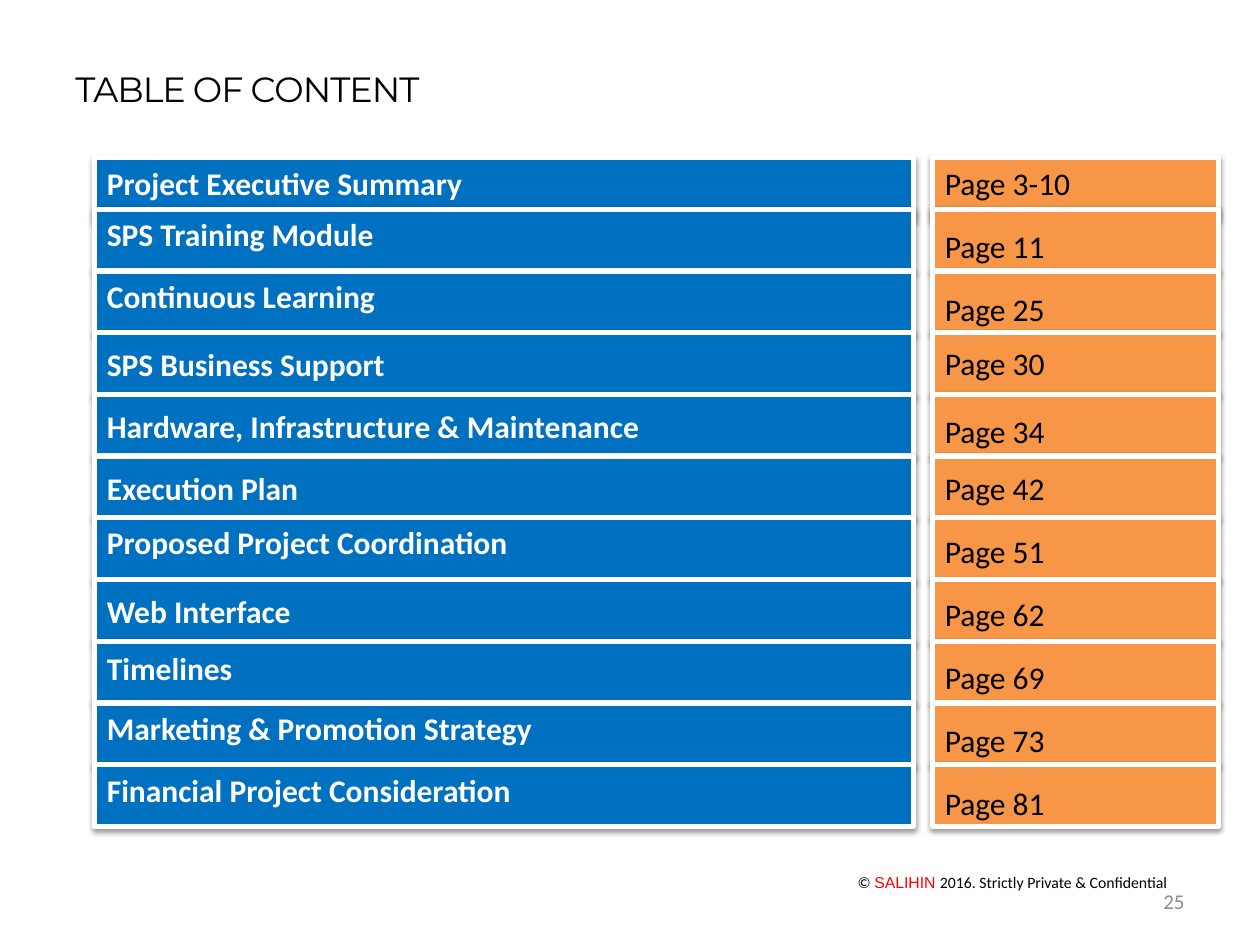
"""Build the table of content slide with its topic bars and page bars."""
from lxml import etree
from pptx import Presentation
from pptx.dml.color import RGBColor
from pptx.enum.shapes import MSO_SHAPE
from pptx.enum.text import MSO_ANCHOR, MSO_AUTO_SIZE, PP_ALIGN
from pptx.oxml import parse_xml
from pptx.util import Inches, Pt

RECTANGLE = MSO_SHAPE.RECTANGLE
TOP, MIDDLE, BOTTOM = MSO_ANCHOR.TOP, MSO_ANCHOR.MIDDLE, MSO_ANCHOR.BOTTOM
GROW, FIXED = MSO_AUTO_SIZE.SHAPE_TO_FIT_TEXT, MSO_AUTO_SIZE.NONE
LEFT, RIGHT = PP_ALIGN.LEFT, PP_ALIGN.RIGHT

COLORS = {"blue": "0070C0", "orange": "F79646", "white": "FFFFFF",
          "black": "000000", "red": "FF0000", "gray": "8C8C8C"}

TITLE = "TABLE OF CONTENT"
PAGE_NUMBER = "25"
COPYRIGHT = [("© ", "Calibri", "black"), ("SALIHIN ", "Arial", "red"),
             ("2016. Strictly Private & Confidential", "Calibri", "black")]

# Each entry: topic, its drop below the bar top, pages, their drop
ENTRIES = [
    ("Project Executive Summary", 0, "Page 3-10", 0),
    ("SPS Training Module", 0, "Page 11", 0.09),
    ("Continuous Learning", 0, "Page 25", 0.1),
    ("SPS Business Support", 0.05, "Page 30", 0.04),
    ("Hardware, Infrastructure & Maintenance", 0.05, "Page 34", 0.09),
    ("Execution Plan", 0.05, "Page 42", 0.05),
    ("Proposed Project Coordination", -0.01, "Page 51", 0.06),
    ("Web Interface", 0.05, "Page 62", 0.07),
    ("Timelines", 0.01, "Page 69", 0.08),
    ("Marketing & Promotion Strategy", 0, "Page 73", 0.09),
    ("Financial Project Consideration", 0, "Page 81", 0.1),
]

TOPIC_LEFT, TOPIC_WIDTH = 0.75, 6.5
PAGE_LEFT, PAGE_WIDTH = 7.4, 2.27
FIRST_TOP, SECOND_TOP, BAR_HEIGHT = 1.25, 1.66, 0.49
TEXT_HEIGHT = 0.4

SHADOW = (
    '<a:effectLst xmlns:a="http://schemas.openxmlformats.org/drawingml/2006/main">'
    '<a:outerShdw blurRad="39370" dist="20320" dir="5400000" rotWithShape="0">'
    '<a:srgbClr val="000000"><a:alpha val="38000"/></a:srgbClr>'
    '</a:outerShdw></a:effectLst>')


def color(name):
    """Return the named colour."""
    return RGBColor.from_string(COLORS[name])


def add_bar(slide, left, top, width, fill):
    """Add a white-edged bar with a soft shadow."""
    bar = slide.shapes.add_shape(RECTANGLE, Inches(left), Inches(top),
                                 Inches(width), Inches(BAR_HEIGHT))
    bar.fill.solid()
    bar.fill.fore_color.rgb = color(fill)
    bar.line.color.rgb = color("white")
    bar.line.width = Pt(3)
    properties = bar.fill._xPr
    properties.append(parse_xml(SHADOW))


def add_text(slide, box, runs, size, bold=False, anchor=MIDDLE,
             align=LEFT, fit=FIXED):
    """Add a text box of one paragraph and return its runs."""
    shape = slide.shapes.add_textbox(*map(Inches, box))
    frame = shape.text_frame
    frame.word_wrap = True
    frame.auto_size = fit
    frame.vertical_anchor = anchor
    paragraph = frame.paragraphs[0]
    paragraph.alignment = align
    for text, font_name, font_color in runs:
        run = paragraph.add_run()
        run.text = text
        run.font.name = font_name
        run.font.size = Pt(size)
        run.font.bold = bold
        run.font.color.rgb = color(font_color)
    return paragraph.runs


def add_entry(slide, index, entry):
    """Add the two bars and two labels of one entry."""
    topic, topic_drop, pages, page_drop = entry
    top = SECOND_TOP + (index - 1) * BAR_HEIGHT if index else FIRST_TOP
    add_bar(slide, TOPIC_LEFT, top, TOPIC_WIDTH, "blue")
    add_bar(slide, PAGE_LEFT, top, PAGE_WIDTH, "orange")
    add_text(slide, (TOPIC_LEFT, top + topic_drop, TOPIC_WIDTH, TEXT_HEIGHT),
             [(topic, "Calibri", "white")], 18, bold=True, fit=GROW)
    add_text(slide, (PAGE_LEFT, top + page_drop, PAGE_WIDTH, TEXT_HEIGHT),
             [(pages, "Calibri", "black")], 18, fit=GROW)


def main():
    """Build and save the slide."""
    presentation = Presentation()
    presentation.slide_width, presentation.slide_height = Inches(10), Inches(7.5)
    slide = presentation.slides.add_slide(presentation.slide_layouts[6])
    add_text(slide, (6.67, 6.88, 2.69, 0.25), COPYRIGHT, 9, anchor=TOP, align=RIGHT)
    title_runs = add_text(slide, (0.5, 0, 7.08, 0.92),
                          [(TITLE, "Montserrat", "black")], 20, anchor=BOTTOM)
    title_runs[0].font._element.set("spc", "-60")
    for index, entry in enumerate(ENTRIES):
        add_entry(slide, index, entry)
    add_text(slide, (7.17, 6.95, 2.33, 0.4),
             [(PAGE_NUMBER, "Calibri", "gray")], 12, align=RIGHT)
    presentation.save("out.pptx")


if __name__ == "__main__":
    main()
